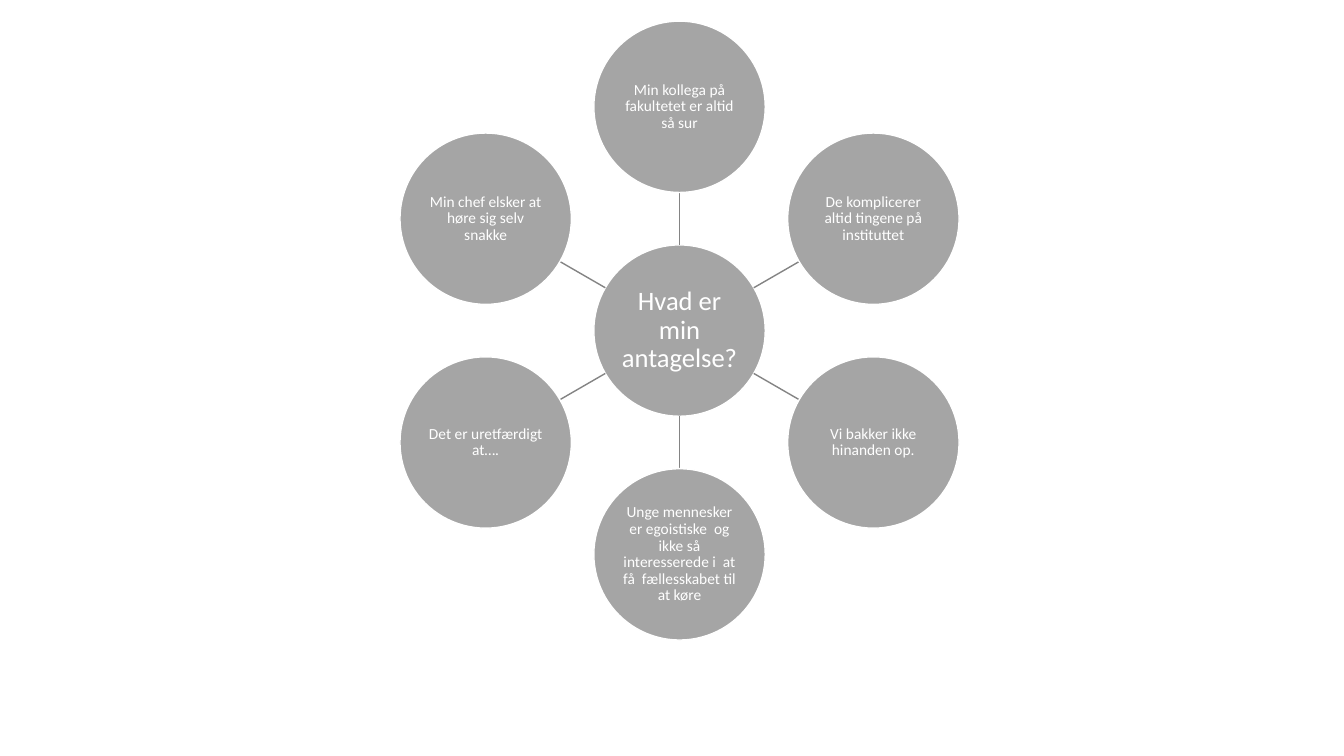
from math import cos, radians, sin

from pptx import Presentation
from pptx.dml.color import RGBColor
from pptx.enum.shapes import MSO_CONNECTOR as CONN, MSO_SHAPE as SHAPE
from pptx.enum.text import MSO_ANCHOR as ANCHOR, PP_ALIGN as ALIGN
from pptx.oxml.ns import qn
from pptx.util import Inches, Pt

GREY = RGBColor(0xA5, 0xA5, 0xA5)
LINE_GREY = RGBColor(0x84, 0x84, 0x84)
WHITE = RGBColor(0xFF, 0xFF, 0xFF)

HUB_X, HUB_Y = 6.74, 3.28
RADIUS = 0.85
ORBIT = 2.22
SPOKE_END = ORBIT - RADIUS

# Clockwise from the top
ASSUMPTIONS = [
    "Min kollega på fakultetet er altid så sur",
    "De komplicerer altid tingene på instituttet",
    "Vi bakker ikke hinanden op.",
    "Unge mennesker er egoistiske  og ikke så interesserede i  at få  fællesskabet til at køre",
    "Det er uretfærdigt at….",
    "Min chef elsker at høre sig selv snakke",
]

prs = Presentation()
prs.slide_width, prs.slide_height = Inches(13.33), Inches(7.5)
s = prs.slides.add_slide(prs.slide_layouts[6])


def add_circle(text, x, y, size=11, color=WHITE, font="Calibri"):
    sp = s.shapes.add_shape(SHAPE.OVAL, Inches(x - RADIUS), Inches(y - RADIUS),
                            Inches(2 * RADIUS), Inches(2 * RADIUS))
    sp.shadow.inherit = False
    sp.fill.solid()
    sp.fill.fore_color.rgb = GREY
    sp.line.color.rgb = WHITE
    sp.line.width = Pt(1)
    tf = sp.text_frame
    tf.word_wrap = True
    tf.vertical_anchor = ANCHOR.MIDDLE
    tf.margin_left = tf.margin_right = tf.margin_top = tf.margin_bottom = Inches(0.01)
    p = tf.paragraphs[0]
    p.alignment = ALIGN.CENTER
    p.line_spacing = 0.9
    r = p.add_run()
    r.text = text
    r.font.name = font
    r.font.size = Pt(size)
    r.font.color.rgb = color


# Hub
add_circle("Hvad er min antagelse?", HUB_X, HUB_Y, size=19)

# Spokes and outer circles
for i, text in enumerate(ASSUMPTIONS):
    angle = radians(i * 360 / len(ASSUMPTIONS) - 90)
    dx, dy = cos(angle), sin(angle)
    spoke = s.shapes.add_connector(
        CONN.STRAIGHT,
        Inches(HUB_X + RADIUS * dx), Inches(HUB_Y + RADIUS * dy),
        Inches(HUB_X + SPOKE_END * dx), Inches(HUB_Y + SPOKE_END * dy))
    spoke.line.color.rgb = LINE_GREY
    spoke.line.width = Pt(1)
    sp_pr = spoke._element.spPr
    sp_pr.append(sp_pr.makeelement(qn("a:effectLst"), {}))
    add_circle(text, HUB_X + ORBIT * dx, HUB_Y + ORBIT * dy)

prs.save("out.pptx")
